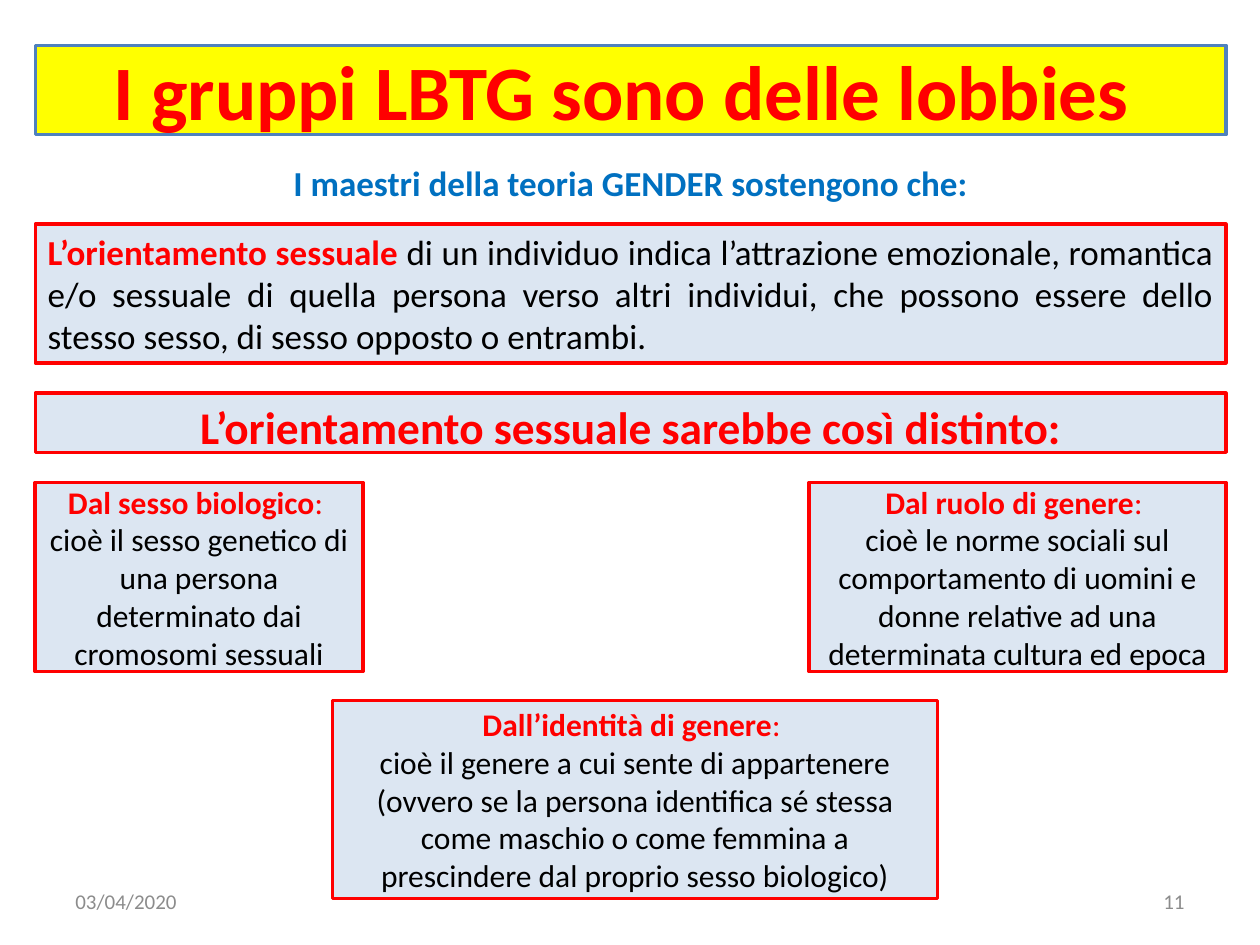
from pptx import Presentation
from pptx.dml.color import RGBColor
from pptx.enum.shapes import MSO_SHAPE
from pptx.enum.text import MSO_ANCHOR, MSO_AUTO_SIZE, PP_ALIGN
from pptx.util import Inches, Pt

RED = RGBColor(0xFF, 0x00, 0x00)
YELLOW = RGBColor(0xFF, 0xFF, 0x00)
PALE_BLUE = RGBColor(0xDC, 0xE6, 0xF2)
MID_BLUE = RGBColor(0x4F, 0x81, 0xBD)
BRIGHT_BLUE = RGBColor(0x00, 0x70, 0xC0)
BLACK = RGBColor(0x00, 0x00, 0x00)
GREY = RGBColor(0x8C, 0x8C, 0x8C)

RECTANGLE = MSO_SHAPE.RECTANGLE
TOP, MIDDLE = MSO_ANCHOR.TOP, MSO_ANCHOR.MIDDLE
NO_FIT = MSO_AUTO_SIZE.NONE
LEFT, CENTER, RIGHT = PP_ALIGN.LEFT, PP_ALIGN.CENTER, PP_ALIGN.RIGHT
JUSTIFY = PP_ALIGN.JUSTIFY

FONT = "Calibri"
MARGIN, FULL_WIDTH = 0.28, 9.45
FOOTER_TOP, FOOTER_WIDTH, FOOTER_HEIGHT = 6.95, 2.33, 0.4
DISTINCTIONS = [
    ((MARGIN, 3.83, 2.6, 1.5), "Dal sesso biologico",
     "cioè il sesso genetico di una persona determinato dai cromosomi sessuali"),
    ((2.64, 5.56, 4.8, 1.57), "Dall’identità di genere",
     "cioè il genere a cui sente di appartenere (ovvero se la persona identifica "
     "sé stessa come maschio o come femmina a prescindere dal proprio sesso biologico)"),
    ((6.42, 3.83, 3.31, 1.5), "Dal ruolo di genere",
     "cioè le norme sociali sul comportamento di uomini e donne relative ad una "
     "determinata cultura ed epoca"),
]


def write(shape, paragraphs, size, align=CENTER, anchor=TOP, space_before=0):
    """Fill a shape with paragraphs, each a list of (text, color, bold) spans."""
    frame = shape.text_frame
    frame.word_wrap = True
    frame.auto_size = NO_FIT
    frame.vertical_anchor = anchor
    for index, spans in enumerate(paragraphs):
        para = frame.add_paragraph() if index else frame.paragraphs[0]
        para.alignment = align
        para.space_before = Pt(space_before)
        for text, color, bold in spans:
            span = para.add_run()
            span.text = text
            span.font.name = FONT
            span.font.size = Pt(size)
            span.font.bold = bold
            span.font.color.rgb = color


def paint(shape, fill, line):
    shape.fill.solid()
    shape.fill.fore_color.rgb = fill
    shape.line.color.rgb = line
    shape.line.width = Pt(2)


def add_panel(page, box, paragraphs, size, **text_format):
    panel = page.shapes.add_shape(RECTANGLE, *map(Inches, box))
    panel.shadow.inherit = False
    paint(panel, PALE_BLUE, RED)
    write(panel, paragraphs, size, **text_format)


def add_label(page, box, text, size, color, bold=False, **text_format):
    label = page.shapes.add_textbox(*map(Inches, box))
    write(label, [[(text, color, bold)]], size, **text_format)


def place_title(page, box, text):
    title = page.shapes.title
    title.left, title.top, title.width, title.height = map(Inches, box)
    paint(title, YELLOW, MID_BLUE)
    write(title, [[(text, RED, True)]], 44, anchor=MIDDLE)


def add_definition(page, box):
    spans = [
        ("L’orientamento sessuale", RED, True),
        (" di un individuo indica l’attrazione emozionale, romantica e/o sessuale "
         "di quella persona verso altri individui, che possono essere dello stesso "
         "sesso, di sesso opposto o entrambi.", BLACK, False),
    ]
    add_panel(page, box, [spans], 20, align=JUSTIFY, space_before=4)


def add_distinction(page, box, heading, explanation):
    paragraphs = [[(heading, RED, True), (": ", RED, False)],
                  [(explanation, BLACK, False)]]
    add_panel(page, box, paragraphs, 18, anchor=MIDDLE)


def add_footer(page, date, number):
    for left, text, align in ((0.5, date, LEFT), (7.17, number, RIGHT)):
        add_label(page, (left, FOOTER_TOP, FOOTER_WIDTH, FOOTER_HEIGHT), text, 12,
                  GREY, align=align, anchor=MIDDLE)


def main():
    deck = Presentation()
    deck.slide_width, deck.slide_height = Inches(10), Inches(7.5)
    page = deck.slides.add_slide(deck.slide_layouts.get_by_name("Title Only"))

    place_title(page, (MARGIN, 0.36, FULL_WIDTH, 0.71),
                "I gruppi LBTG sono delle lobbies ")
    add_definition(page, (MARGIN, 1.78, FULL_WIDTH, 1.1))
    add_footer(page, "03/04/2020", "11")
    add_label(page, (MARGIN, 1.23, FULL_WIDTH, 0.44),
              "I maestri della teoria GENDER sostengono che:", 20, BRIGHT_BLUE, bold=True)
    add_panel(page, (MARGIN, 3.12, FULL_WIDTH, 0.47),
              [[("L’orientamento sessuale sarebbe così distinto:", RED, True)]], 25.9)
    for box, heading, explanation in DISTINCTIONS:
        add_distinction(page, box, heading, explanation)

    deck.save("out.pptx")


if __name__ == "__main__":
    main()
